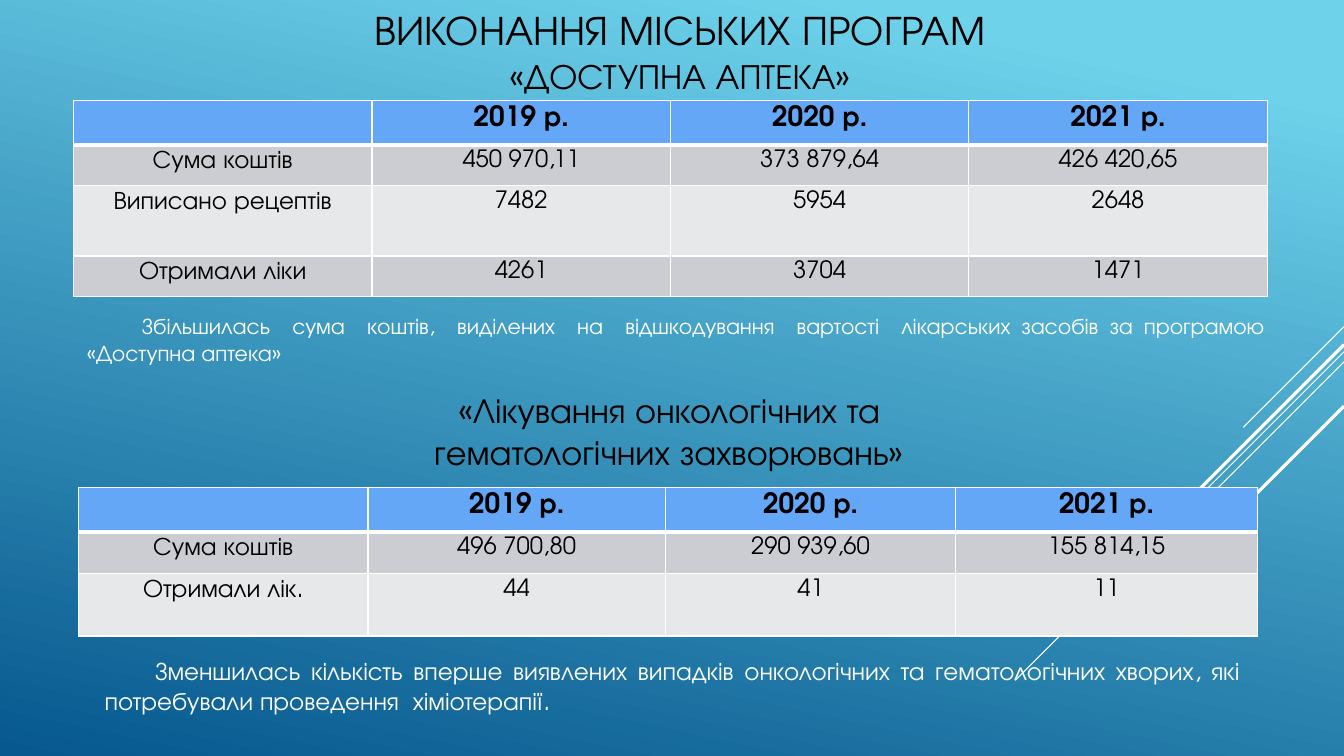
from lxml.etree import SubElement
from pptx import Presentation
from pptx.dml.color import RGBColor
from pptx.enum.shapes import MSO_CONNECTOR
from pptx.enum.text import MSO_ANCHOR, MSO_AUTO_SIZE, PP_ALIGN
from pptx.oxml import parse_xml
from pptx.oxml.ns import nsdecls, qn
from pptx.util import Inches, Pt

FONT = "TeX Gyre Adventor"
BLACK, WHITE = "000000", "FFFFFF"
HEADER_FILL, BAND_FILLS = "64A7F7", ["CCCDD2", "E7E8EA"]


def color(value):
    return RGBColor.from_string(value)


def write(para, text, size, ink=BLACK, bold=False, align=PP_ALIGN.CENTER):
    para.alignment = align
    span = para.add_run()
    span.text = text
    for name, value in {"name": FONT, "size": Pt(size), "bold": bold}.items():
        setattr(span.font, name, value)
    span.font.color.rgb = color(ink)


deck = Presentation()
deck.slide_width, deck.slide_height = Inches(13.33), Inches(7.5)
page = deck.slides.add_slide(deck.slide_layouts[5])

# Background
backdrop = page.background.fill
backdrop.gradient()
backdrop.gradient_angle = 360 - 102
for stop, (position, shade) in zip(backdrop.gradient_stops, [(0.1, "6ED2EB"), (1, "06588E")]):
    stop.position = position
    stop.color.rgb = color(shade)

# Diagonal rays from the right edge: start height, horizontal run, width
for top, run, width in [(3.24, 1, 0.75), (3.49, 3.26, 0.75), (3.59, 2.07, 0.75),
                        (3.42, 1.91, 2.25), (4.03, 1.39, 2.25)]:
    ray = page.shapes.add_connector(MSO_CONNECTOR.STRAIGHT, Inches(13.33), Inches(top),
                                    Inches(13.33 - run), Inches(top + run))
    ray.line.color.rgb = color(WHITE)
    ray.line.width = Pt(width)
    SubElement(ray.element.spPr, qn("a:effectLst"))

# Title
title = page.shapes.title
title.left, title.top, title.width, title.height = map(Inches, (2.03, 0, 9.43, 1))
title.text_frame.auto_size = MSO_AUTO_SIZE.NONE
title.text_frame.vertical_anchor = MSO_ANCHOR.MIDDLE
title_para = title.text_frame.paragraphs[0]
write(title_para, "ВИКОНАННЯ МІСЬКИХ ПРОГРАМ", 29.7)
title_para.add_line_break()
write(title_para, "«ДОСТУПНА АПТЕКА»", 25.2)

# Tables: left, top, column widths, row heights, body rows
years = ["", "2019 р.", "2020 р.", "2021 р."]
programmes = [
    (0.73, 1, [2.96] * 4, [0.44, 0.4, 0.7, 0.4], [
        ["Сума коштів", "450 970,11", "373 879,64", "426 420,65"],
        ["Виписано рецептів", "7482", "5954", "2648"],
        ["Отримали ліки", "4261", "3704", "1471"]]),
    (0.78, 4.84, [2.87, 2.95, 2.88, 2.99], [0.44, 0.41, 0.62], [
        ["Сума коштів", "496 700,80", "290 939,60", "155 814,15"],
        ["Отримали лік.", "44", "41", "11"]]),
]
for left, top, widths, heights, body in programmes:
    table = page.shapes.add_table(len(heights), len(widths), Inches(left), Inches(top),
                                  Inches(sum(widths)), Inches(sum(heights))).table
    for column, width in zip(table.columns, widths):
        column.width = Inches(width)
    for row_number, (height, texts) in enumerate(zip(heights, [years] + body)):
        table.rows[row_number].height = Inches(height)
        header = row_number == 0
        for column_number, text in enumerate(texts):
            cell = table.cell(row_number, column_number)
            cell.margin_top, cell.margin_bottom = Inches(0.05), 0
            cell.fill.solid()
            cell.fill.fore_color.rgb = color(HEADER_FILL if header else BAND_FILLS[(row_number - 1) % 2])
            size = 20 if header else 18 if column_number == 0 else 17
            if text:
                write(cell.text_frame.paragraphs[0], text, size, bold=header)
            # A thick rule separates the header from the body
            thick = {0: "B", 1: "T"}.get(row_number)
            for place, side in enumerate("LRTB"):
                weight = Pt(3 if side == thick else 1)
                cell._tc.get_or_add_tcPr().insert(place, parse_xml(
                    f'<a:ln{side} {nsdecls("a")} w="{weight}"><a:solidFill>'
                    f'<a:srgbClr val="{WHITE}"/></a:solidFill></a:ln{side}>'))

# Text boxes: position, text, size, colour, alignment, first-line indent
captions = [
    ((0.76, 3.05, 11.89, 0.64),
     "Збільшилась  сума  коштів,  виділених  на  відшкодування  вартості  "
     "лікарських засобів за програмою «Доступна аптека»", 16, WHITE, PP_ALIGN.JUSTIFY, 0.55),
    ((3.38, 3.81, 6.51, 1.25),
     "«Лікування онкологічних та гематологічних захворювань»", 25, BLACK, PP_ALIGN.CENTER, 0),
    ((0.94, 6.45, 11.46, 0.71),
     "Зменшилась кількість вперше виявлених випадків онкологічних та гематологічних хворих, "
     "які потребували проведення  хіміотерапії.", 18, WHITE, PP_ALIGN.JUSTIFY, 0.5),
]
for place, text, size, ink, align, indent in captions:
    box = page.shapes.add_textbox(*map(Inches, place))
    box.text_frame.word_wrap = True
    para = box.text_frame.paragraphs[0]
    write(para, text, size, ink, align=align)
    if indent:
        para._p.get_or_add_pPr().set("indent", str(Inches(indent)))

deck.save("out.pptx")
